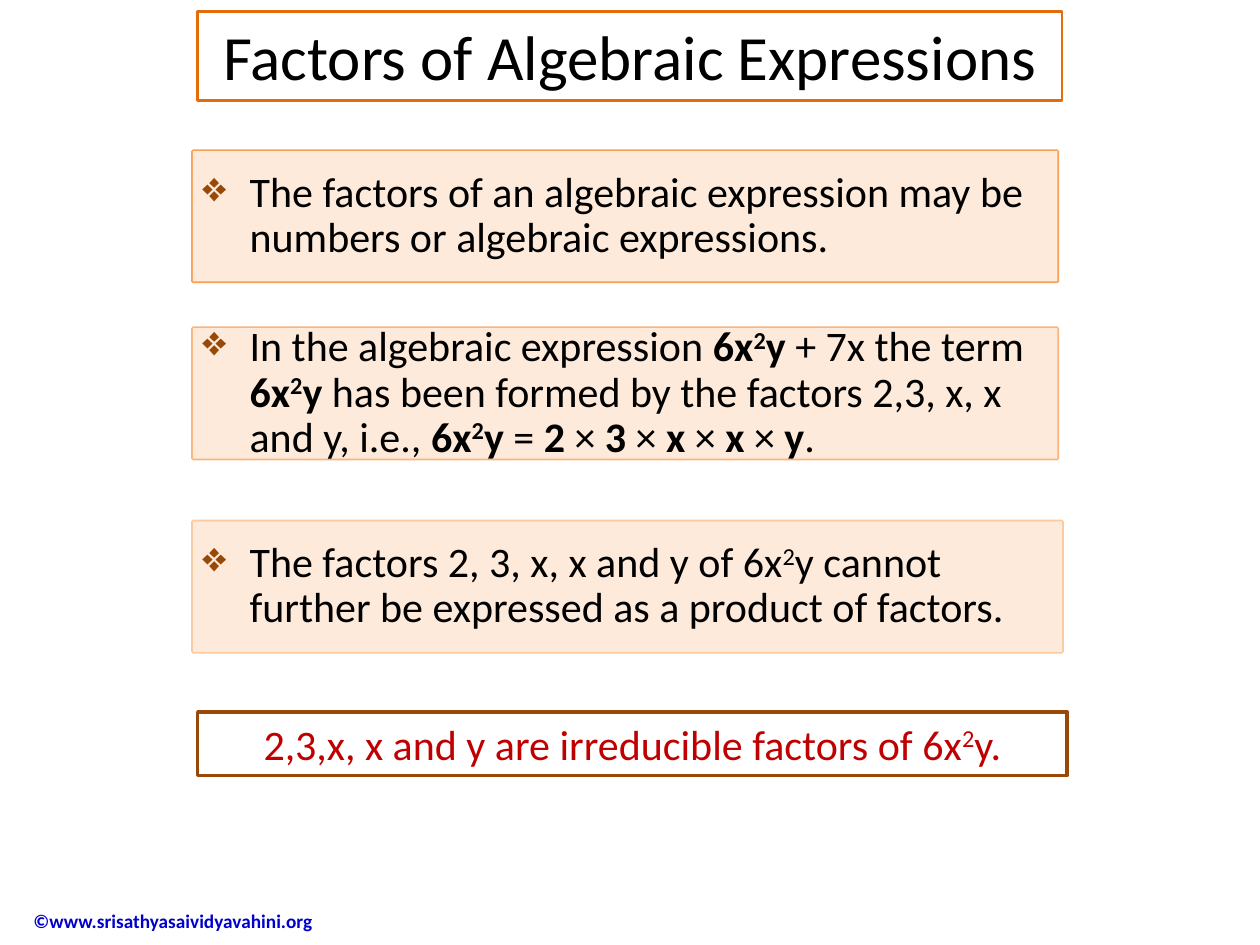
"""Build the slide on factors of algebraic expressions."""
from lxml import etree
from pptx import Presentation
from pptx.dml.color import RGBColor
from pptx.enum import shapes, text
from pptx.oxml import ns
from pptx.util import Pt

BLACK = RGBColor(0x00, 0x00, 0x00)
WHITE = RGBColor(0xFF, 0xFF, 0xFF)
RED = RGBColor(0xC0, 0x00, 0x00)
BLUE = RGBColor(0x00, 0x00, 0xCC)
BROWN = RGBColor(0x98, 0x48, 0x07)
DARK_ORANGE = RGBColor(0xE4, 0x6C, 0x0A)
ORANGE = RGBColor(0xF7, 0x96, 0x46)
PEACH = RGBColor(0xFD, 0xEA, 0xDA)


def add_box(parent, at, fill=None, line=None, weight=0):
    sp = parent.add_shape(shapes.MSO_SHAPE.RECTANGLE, *map(Pt, at))
    sp.shadow.inherit = False
    if fill is None:
        sp.fill.background()
    else:
        sp.fill.solid()
        sp.fill.fore_color.rgb = fill
    if line is None:
        sp.line.fill.background()
    else:
        sp.line.color.rgb = line
        sp.line.width = Pt(weight)
    return sp


def write(sp, content, frame, size, color, align, bold=False):
    """Write text in which *...* is bold and ^...^ is superscript."""
    tf = sp.text_frame
    for name, value in frame.items():
        setattr(tf, name, value)
    p = tf.paragraphs[0]
    p.alignment = align
    for i, part in enumerate(content.split("*")):
        for j, piece in enumerate(part.split("^")):
            if not piece:
                continue
            r = p.add_run()
            r.text = piece
            font = {"name": "Calibri", "size": Pt(size), "bold": bold or i % 2 == 1}
            for name, value in font.items():
                setattr(r.font, name, value)
            r.font.color.rgb = color
            if j % 2:
                r.font._element.set("baseline", "30000")
    return p


prs = Presentation()
prs.slide_width, prs.slide_height = Pt(720), Pt(540)
s = prs.slides.add_slide(prs.slide_layouts[6])

LEFT, CENTER = text.PP_ALIGN.LEFT, text.PP_ALIGN.CENTER
TOP, MIDDLE = text.MSO_ANCHOR.TOP, text.MSO_ANCHOR.MIDDLE
GROW = text.MSO_AUTO_SIZE.SHAPE_TO_FIT_TEXT

sp = s.shapes.add_textbox(Pt(12), Pt(511.2), Pt(182), Pt(29.5))
write(sp, "©www.srisathyasaividyavahini.org",
      {"word_wrap": True, "vertical_anchor": MIDDLE}, 11, BLUE, LEFT, bold=True)

sp = add_box(s.shapes, (113, 6.5, 494, 51), None, DARK_ORANGE, 1.5)
write(sp, "Factors of Algebraic Expressions",
      {"word_wrap": False, "vertical_anchor": TOP, "auto_size": GROW}, 36, BLACK, CENTER)

sp = add_box(s.shapes, (113, 406.8, 496.8, 36.4), WHITE, BROWN, 2)
write(sp, "2,3,x, x and y are irreducible factors of 6x^2^y.",
      {"word_wrap": True, "vertical_anchor": MIDDLE, "auto_size": GROW}, 24, RED, CENTER)

margins = {f"margin_{side}": Pt(5.4) for side in ("left", "top", "right", "bottom")}
card_frame = {"word_wrap": True, "vertical_anchor": MIDDLE, **margins}
cards = [
    (86.4, 494, 90, "The factors of an algebraic expression may be numbers or algebraic expressions."),
    (187.6, 494, 70, "In the algebraic expression *6x^2^y* + 7x the term *6x^2^y* has been formed by "
     "the factors 2,3, x, x and y, i.e., *6x^2^y* = *2* × *3* × *x* × *x* × *y*."),
    (298, 496.8, 50, "The factors 2, 3, x, x and y of 6x^2^y cannot further be expressed "
     "as a product of factors."),
]
for top, width, opacity, content in cards:
    group = s.shapes.add_group_shape()
    at = (110.2, top, width, 74.5)
    sp = add_box(group.shapes, at, PEACH, ORANGE, 2)
    clr = sp.line._ln.find(".//" + ns.qn("a:srgbClr"))
    etree.SubElement(clr, ns.qn("a:alpha"), val=str(opacity * 1000))

    sp = add_box(group.shapes, at, PEACH)
    p = write(sp, content, card_frame, 24, BLACK, LEFT)
    p.line_spacing = 0.9
    pPr = p._p.get_or_add_pPr()
    pPr.set("marL", str(Pt(27)))
    pPr.set("indent", str(Pt(-27)))
    bu = etree.SubElement(pPr, ns.qn("a:buClr"))
    etree.SubElement(bu, ns.qn("a:srgbClr"), val=str(BROWN))
    etree.SubElement(pPr, ns.qn("a:buChar"), char="❖")

prs.save("out.pptx")
